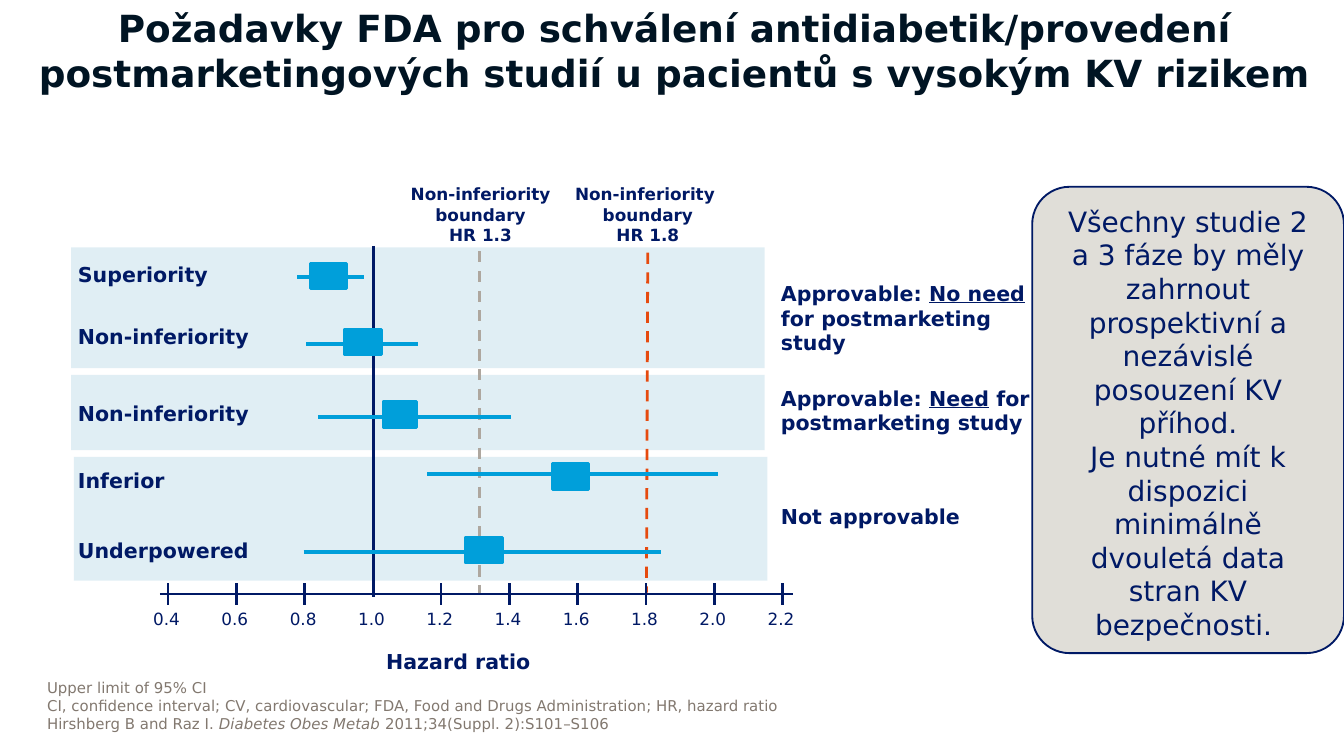
from lxml import etree
from pptx import Presentation
from pptx.dml.color import RGBColor
from pptx.enum.dml import MSO_LINE
from pptx.enum.shapes import MSO_CONNECTOR, MSO_SHAPE
from pptx.enum.text import MSO_ANCHOR, PP_ALIGN
from pptx.oxml.ns import qn
from pptx.util import Inches, Pt

DASH = MSO_LINE.DASH
STRAIGHT = MSO_CONNECTOR.STRAIGHT
RECT, ROUNDED = MSO_SHAPE.RECTANGLE, MSO_SHAPE.ROUNDED_RECTANGLE
TOP, MIDDLE, BOTTOM = MSO_ANCHOR.TOP, MSO_ANCHOR.MIDDLE, MSO_ANCHOR.BOTTOM
LEFT, CENTER = PP_ALIGN.LEFT, PP_ALIGN.CENTER

THEME = {
    "font": "DejaVu Sans",
    "title": RGBColor.from_string("001423"),
    "navy": RGBColor.from_string("001965"),
    "blue": RGBColor.from_string("009FDA"),
    "band": RGBColor.from_string("C2DEEA"),
    "orange": RGBColor.from_string("E64A0E"),
    "gray": RGBColor.from_string("AEA79F"),
    "note": RGBColor.from_string("82786F"),
    "panel": RGBColor.from_string("E0DED8"),
    "title_size": 20, "panel_size": 15, "label_size": 11,
    "axis_size": 9, "note_size": 8,
}

prs = Presentation()
prs.slide_width = Inches(10)
prs.slide_height = prs.slide_width * 9 // 16
COL = prs.slide_width / 100
ROW = prs.slide_height / 56.25
s = prs.slides.add_slide(prs.slide_layouts[6])


def add_text(sp, paras, size, color, bold=False, align=LEFT, anchor=TOP,
             insets=(0.7, 0.4, 0.7, 0.4)):
    tf = sp.text_frame
    tf.word_wrap = True
    tf.vertical_anchor = anchor
    tf.margin_left, tf.margin_right = int(insets[0] * COL), int(insets[2] * COL)
    tf.margin_top, tf.margin_bottom = int(insets[1] * ROW), int(insets[3] * ROW)
    for i, runs in enumerate(paras):
        p = tf.paragraphs[0] if i == 0 else tf.add_paragraph()
        p.alignment = align
        for text, style in runs:
            if text == "\n":
                p.add_line_break()
                continue
            r = p.add_run()
            r.text = text
            r.font.name = THEME["font"]
            r.font.size = Pt(THEME[size])
            r.font.color.rgb = THEME[color]
            r.font.bold = bold
            if style == "u":
                r.font.underline = True
            if style == "i":
                r.font.italic = True


def add_line(x1, y1, x2, y2, color, width=1.5, dash=None):
    ln = s.shapes.add_connector(STRAIGHT, int(x1 * COL), int(y1 * ROW),
                                int(x2 * COL), int(y2 * ROW))
    ln.line.color.rgb = THEME[color]
    ln.line.width = Pt(width)
    if dash:
        ln.line.dash_style = dash
    etree.SubElement(ln._element.spPr, qn("a:effectLst"))


for x, y, h in [(5.5, 34, 9.2), (5.3, 27.9, 5.6), (5.3, 18.4, 9)]:
    sp = s.shapes.add_shape(RECT, int(x * COL), int(y * ROW),
                            int(51.6 * COL), int(h * ROW))
    sp.shadow.inherit = False
    sp.fill.solid()
    sp.fill.fore_color.rgb = THEME["band"]
    sp.line.fill.background()
    clr = sp._element.spPr.find(qn("a:solidFill"))[0]
    etree.SubElement(clr, qn("a:alpha")).set("val", "50000")

add_line(48.2, 18.8, 48.1, 44.1, "orange", dash=DASH)
add_line(35.7, 18.7, 35.7, 44.1, "gray", dash=DASH)
add_line(27.8, 18.3, 27.8, 44.4, "navy")
add_line(11.9, 44.2, 59, 44.2, "navy")

labels = []
for i in range(10):
    hr = 0.4 + 0.2 * i
    tick = 12.5 + 5.08 * i
    if i != 3:
        add_line(tick, 43.4, tick, 45, "navy")
    labels.append((tick - 1.8, 44.9, 5.2, 2.3, [[(f"{hr:.1f}", "")]],
                   "axis_size", False, LEFT))

studies = [
    ("Superiority", 19.1, 22.1, 27.1, 20.6, 23.1, 19.6, 2.7),
    ("Non-inferiority", 23.7, 22.8, 31.1, 25.6, 25.6, 24.5, 2.8),
    ("Non-inferiority", 29.4, 23.7, 38, 31, 28.5, 29.9, 2.5),
    ("Inferior", 34.4, 31.8, 53.4, 35.3, 41.1, 34.5, 2.7),
    ("Underpowered", 39.6, 22.6, 49.2, 41.1, 34.6, 40, 2.8),
]
for name, label_y, low, high, y, box_x, box_y, box_w in studies:
    add_line(low, y, high, y, "blue", 2.25)
    sp = s.shapes.add_shape(RECT, int(box_x * COL), int(box_y * ROW),
                            int(box_w * COL), int(1.9 * ROW))
    sp.shadow.inherit = False
    sp.fill.solid()
    sp.fill.fore_color.rgb = THEME["blue"]
    sp.line.color.rgb = THEME["blue"]
    sp.line.width = Pt(1.5)
    labels.append((5.1, label_y, 19, 2.6, [[(name, "")]],
                   "label_size", True, LEFT))

boundaries = [
    (39.3, 17.8, [("Non-inferiority ", ""), ("\n", ""), ("boundary", "")], "HR 1.8"),
    (28.4, 14.7, [("Non-inferiority boundary", "")], "HR 1.3"),
]
for x, w, runs, limit in boundaries:
    labels.append((x, 13.3, w, 5.3, [runs, [(limit, "")]],
                   "axis_size", True, CENTER))
labels.append((26.7, 47.9, 14.8, 2.6, [[("Hazard ratio", "")]],
               "label_size", True, CENTER))

verdicts = [
    (20.5, 6.3, [("Approvable: ", ""), ("No need", "u"),
                 (" for postmarketing study", "")]),
    (28.3, 4.5, [("Approvable: ", ""), ("Need", "u"),
                 (" for postmarketing study", "")]),
    (37.1, 2.6, [("Not approvable", "")]),
]
for y, h, runs in verdicts:
    labels.append((57.4, y, 21.2, h, [runs], "label_size", True, LEFT))

for x, y, w, h, paras, size, bold, align in labels:
    sp = s.shapes.add_textbox(int(x * COL), int(y * ROW), int(w * COL), int(h * ROW))
    add_text(sp, paras, size, "navy", bold, align)

sp = s.shapes.add_textbox(int(2.5 * COL), int(0.4 * ROW), int(95.4 * COL), int(6.7 * ROW))
add_text(sp, [[("Požadavky FDA pro schválení antidiabetik/provedení "
                "postmarketingových studií u pacientů s vysokým KV rizikem", "")]],
         "title_size", "title", True, CENTER, MIDDLE, (0, 0, 0, 0))

sp = s.shapes.add_textbox(int(3.5 * COL), int(46.1 * ROW), int(93.1 * COL), int(8.4 * ROW))
add_text(sp, [
    [("Upper limit of 95% CI", "")],
    [("CI, confidence interval; CV, cardiovascular; FDA, Food and Drugs "
      "Administration; HR, hazard ratio", "")],
    [("Hirshberg B and Raz I. ", ""), ("Diabetes Obes Metab ", "i"),
     ("2011;34(Suppl. 2):S101–S106", "")],
], "note_size", "note", anchor=BOTTOM, insets=(0, 0, 2.4, 0))

sp = s.shapes.add_shape(ROUNDED, int(76.8 * COL), int(13.9 * ROW),
                        int(23.2 * COL), int(34.7 * ROW))
sp.adjustments[0] = 0.12
sp.shadow.inherit = False
sp.fill.solid()
sp.fill.fore_color.rgb = THEME["panel"]
sp.line.color.rgb = THEME["navy"]
sp.line.width = Pt(1)
add_text(sp, [[("Všechny studie 2 a 3 fáze by měly zahrnout prospektivní a "
                "nezávislé posouzení KV příhod.", ""), ("\n", ""),
               ("Je nutné mít k dispozici minimálně dvouletá data stran "
                "KV bezpečnosti. ", "")]],
         "panel_size", "navy", align=CENTER, insets=(1, 0.5, 1, 0.5))

prs.save("out.pptx")
